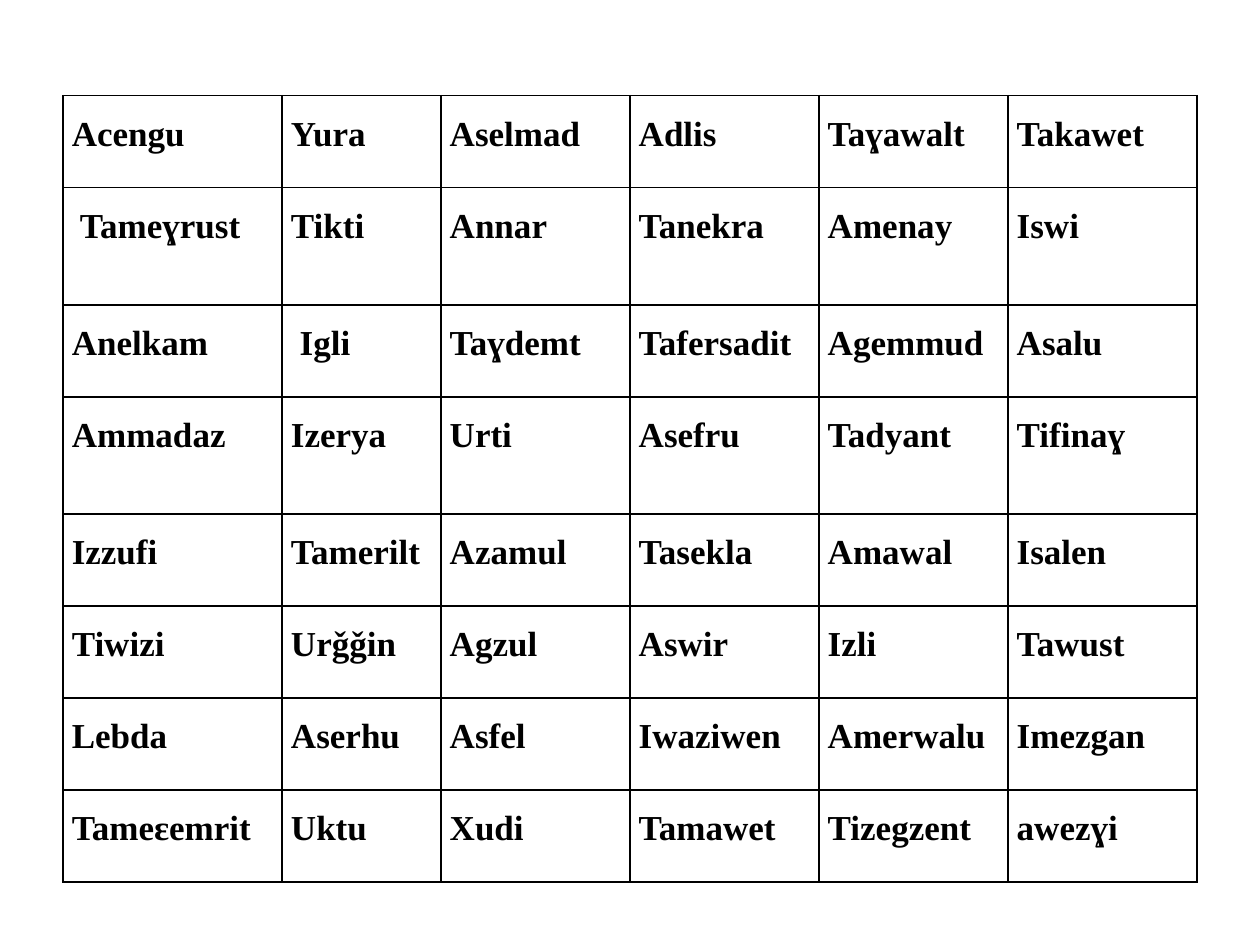
from pptx import Presentation
from pptx.dml.color import RGBColor as RGB
from pptx.enum.text import PP_ALIGN as Align
from pptx.oxml import parse_xml as parse
from pptx.oxml.ns import nsdecls
from pptx.util import Inches, Pt

HUES = {"ink": "000000", "line": "000000"}
FONT = "Times New Roman"
LEFT, TOP = 0.5, 0.76
COLS = [1.74, 1.26] + [1.5] * 4
LOW, TALL = 0.73, 0.93
ROWS = [LOW, TALL] * 2 + [LOW] * 4
WORDS = [
    ["Acengu", "Yura", "Aselmad", "Adlis", "Taɣawalt", "Takawet"],
    [" Tameɣrust", "Tikti", "Annar", "Tanekra", "Amenay", "Iswi"],
    ["Anelkam", " Igli", "Taɣdemt", "Tafersadit", "Agemmud", "Asalu"],
    ["Ammadaz", "Izerya", "Urti", "Asefru", "Tadyant", "Tifinaɣ"],
    ["Izzufi", "Tamerilt", "Azamul", "Tasekla", "Amawal", "Isalen"],
    ["Tiwizi", "Urǧǧin", "Agzul", "Aswir", "Izli", "Tawust"],
    ["Lebda", "Aserhu", "Asfel", "Iwaziwen", "Amerwalu", "Imezgan"],
    ["Tameɛemrit", "Uktu", "Xudi", "Tamawet", "Tizegzent", "awezɣi"],
]


def add_edges(cell):
    """Draw a thin line on all four sides of a cell."""
    props = cell._tc.get_or_add_tcPr()
    for spot, side in enumerate(("lnL", "lnR", "lnT", "lnB")):
        props.insert(spot, parse(
            f'<a:{side} {nsdecls("a")} w="{Pt(1)}"><a:solidFill>'
            f'<a:srgbClr val="{HUES["line"]}"/></a:solidFill></a:{side}>'))


def fill_cell(cell, word):
    """Put one word in a cell and style it."""
    cell.fill.background()
    cell.margin_left = cell.margin_right = Inches(0.07)
    cell.margin_top = cell.margin_bottom = 0
    para = cell.text_frame.paragraphs[0]
    para.text = word
    para.alignment = Align.JUSTIFY
    para.line_spacing = 1.5
    font = para.runs[0].font
    font.name, font.size, font.bold = FONT, Pt(20), True
    font.color.rgb = RGB.from_string(HUES["ink"])
    add_edges(cell)


def add_words(slide):
    """Add the table of words."""
    box = [Inches(n) for n in (LEFT, TOP, sum(COLS), sum(ROWS))]
    table = slide.shapes.add_table(len(ROWS), len(COLS), *box).table
    table.first_row = table.horz_banding = False
    for col, width in zip(table.columns, COLS):
        col.width = Inches(width)
    for row, height, words in zip(table.rows, ROWS, WORDS):
        row.height = Inches(height)
        for cell, word in zip(row.cells, words):
            fill_cell(cell, word)


def main():
    """Build and save the slide."""
    deck = Presentation()
    deck.slide_width, deck.slide_height = Inches(10), Inches(7.5)
    add_words(deck.slides.add_slide(deck.slide_layouts[6]))
    deck.save("out.pptx")


if __name__ == "__main__":
    main()
